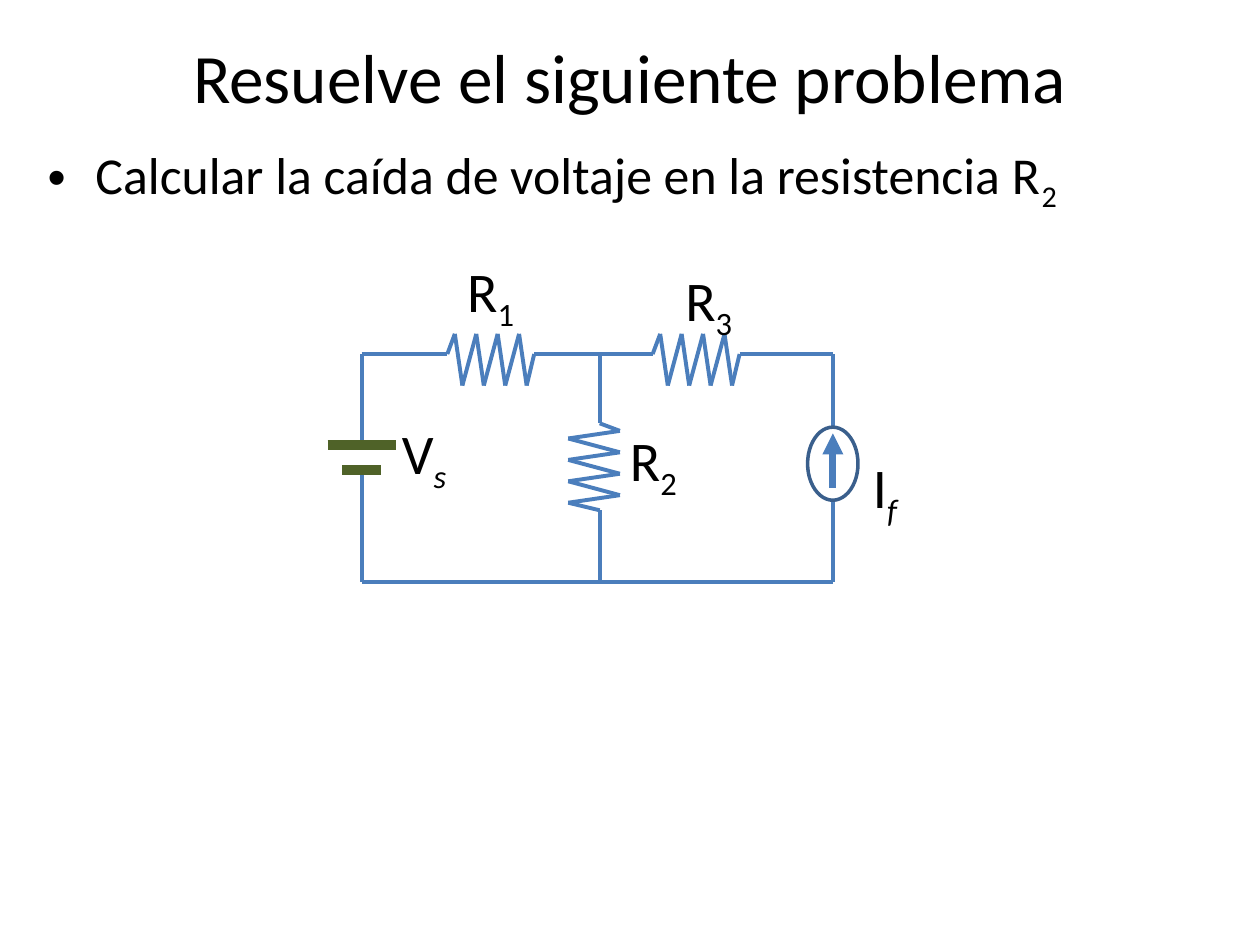
from itertools import pairwise

from pptx import Presentation
from pptx.dml.color import RGBColor
from pptx.enum.shapes import MSO_CONNECTOR, MSO_SHAPE
from pptx.enum.text import MSO_ANCHOR, PP_ALIGN
from pptx.oxml.ns import qn
from pptx.util import Inches, Pt

LINE = MSO_CONNECTOR.STRAIGHT
OVAL = MSO_SHAPE.OVAL
CENTER, LEFT = PP_ALIGN.CENTER, PP_ALIGN.LEFT
MIDDLE, TOP = MSO_ANCHOR.MIDDLE, MSO_ANCHOR.TOP

BLACK = RGBColor(0x00, 0x00, 0x00)
WIRE = RGBColor(0x4B, 0x7E, 0xBC)
SOURCE_EDGE = RGBColor(0x3A, 0x5F, 0x8C)
BATTERY = RGBColor(0x4F, 0x62, 0x28)


class Circuit:
    font = "Calibri"
    wire_width = 2.25
    indent = 0.38

    def __init__(self, slide):
        self.slide = slide

    def text(self, box, text, size, sub="", italic=False, align=LEFT, anchor=TOP):
        """Add one paragraph, with an optional subscript, and return it."""
        sp = self.slide.shapes.add_textbox(*map(Inches, box))
        tf = sp.text_frame
        tf.word_wrap = True
        tf.vertical_anchor = anchor
        p = tf.paragraphs[0]
        p.text = text
        p.alignment = align
        if sub:
            r = p.add_run()
            r.text = sub
            r.font.italic = italic
            r.font._element.set("baseline", "-25000")
        for r in p.runs:
            r.font.name = self.font
            r.font.size = Pt(size)
            r.font.color.rgb = BLACK
        return p

    def bullet(self, box, text, size, sub):
        p = self.text(box, text, size, sub)
        pPr = p._p.get_or_add_pPr()
        pPr.set("marL", str(Inches(self.indent)))
        pPr.set("indent", str(-Inches(self.indent)))
        bu_font = pPr.makeelement(qn("a:buFont"), {"typeface": "Arial"})
        bu_char = pPr.makeelement(qn("a:buChar"), {"char": "•"})
        pPr.extend([bu_font, bu_char])

    def label(self, x, y, name, sub, italic=False, width=1.35):
        self.text((x, y, width, 0.66), name, 32, sub, italic)

    def line(self, start, end, color=WIRE, width=wire_width, arrow=False, parent=None):
        shapes = (parent or self.slide).shapes
        cxn = shapes.add_connector(LINE, *map(Inches, (*start, *end)))
        cxn.line.color.rgb = color
        cxn.line.width = Pt(width)
        if arrow:
            ln = cxn.line._get_or_add_ln()
            ln.append(ln.makeelement(qn("a:tailEnd"), {"type": "triangle"}))
        spPr = cxn._element.spPr
        spPr.append(spPr.makeelement(qn("a:effectLst"), {}))

    def resistor(self, x, y, vertical=False):
        """Draw a zigzag of four teeth with a lead at each end."""
        points = [(0, 0), (0.29, 0)]
        for i in range(4):
            points += [(0.35 + 0.17 * i, -0.16), (0.41 + 0.17 * i, 0.25)]
        points += [(0.98, 0), (1.26, 0)]
        if vertical:
            points = [(-across, along) for along, across in points]
        group = self.slide.shapes.add_group_shape()
        for (x1, y1), (x2, y2) in pairwise(points):
            self.line((x + x1, y + y1), (x + x2, y + y2), parent=group)

    def battery(self, x, y):
        group = self.slide.shapes.add_group_shape()
        for half, dy in ((0.27, 0), (0.155, 0.2)):
            self.line((x - half, y + dy), (x + half, y + dy), BATTERY, 5.5, parent=group)

    def current_source(self, x, y, width, height):
        group = self.slide.shapes.add_group_shape()
        mid = x + width / 2
        self.line((mid, y + 0.48), (mid, y + 0.05), width=4, arrow=True, parent=group)
        sp = group.shapes.add_shape(OVAL, *map(Inches, (x, y, width, height)))
        sp.shadow.inherit = False
        sp.fill.background()
        sp.line.color.rgb = SOURCE_EDGE
        sp.line.width = Pt(2)


def main():
    prs = Presentation()
    prs.slide_width, prs.slide_height = Inches(10), Inches(7.5)
    c = Circuit(prs.slides.add_slide(prs.slide_layouts[6]))

    c.text((0.5, 0.3, 9, 0.61), "Resuelve el siguiente problema", 39.6,
           align=CENTER, anchor=MIDDLE)
    c.bullet((0.28, 1.08, 9, 0.55),
             "Calcular la caída de voltaje en la resistencia R", 29.6, "2")

    left, middle, right = 2.87, 4.76, 6.61
    top, bottom = 2.81, 4.62
    wires = [
        ((left, bottom), (right, bottom)),
        ((left, top), (left, 3.5)),
        ((left, 3.75), (left, bottom)),
        ((left, top), (3.4, top)),
        ((4.44, top), (4.98, top)),
        ((6.07, top), (right, top)),
        ((middle, top), (middle, 3.18)),
        ((middle, 4.26), (middle, bottom)),
        ((right, top), (right, 3.39)),
        ((right, 3.97), (right, bottom)),
    ]
    for start, end in wires:
        c.line(start, end)

    c.resistor(3.26, top)
    c.resistor(4.89, top)
    c.resistor(middle, 3.07, vertical=True)
    c.battery(left, 3.53)
    c.current_source(6.41, 3.39, 0.4, 0.58)

    c.label(3.61, 1.99, "R", "1")
    c.label(4.9, 3.33, "R", "2")
    c.label(5.34, 2.06, "R", "3")
    c.label(3.09, 3.27, "V", "s", italic=True)
    c.label(6.83, 3.54, "I", "f", italic=True, width=0.51)

    prs.save("out.pptx")


if __name__ == "__main__":
    main()
